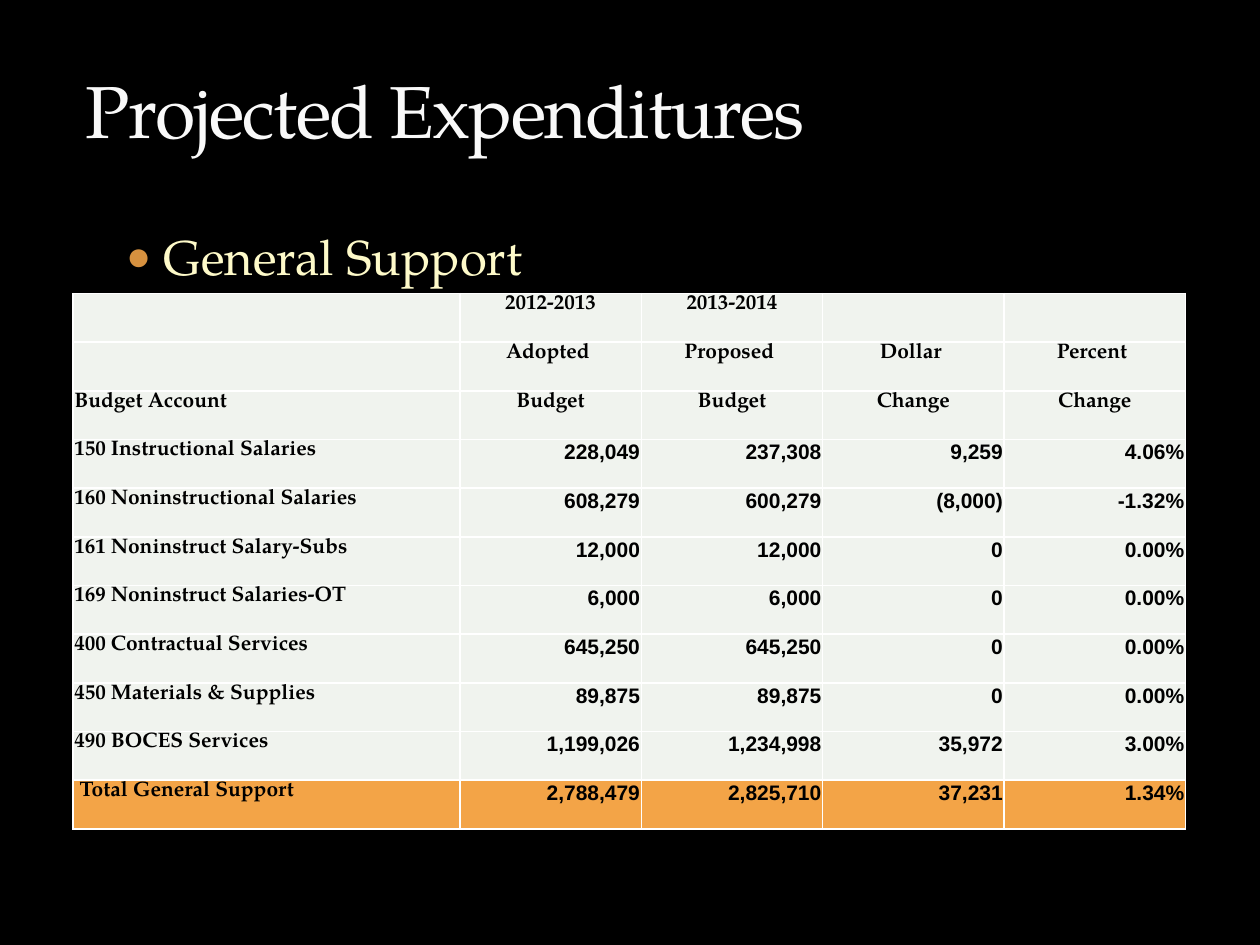
"""Build the Projected Expenditures slide with its general support budget table."""
from dataclasses import dataclass

from lxml import etree
from pptx import Presentation
from pptx.dml.color import RGBColor
from pptx.enum.text import MSO_ANCHOR, MSO_AUTO_SIZE, PP_ALIGN
from pptx.oxml.ns import qn
from pptx.util import Inches, Pt

LEFT, CENTER, RIGHT = PP_ALIGN.LEFT, PP_ALIGN.CENTER, PP_ALIGN.RIGHT
TOP, BOTTOM = MSO_ANCHOR.TOP, MSO_ANCHOR.BOTTOM
NO_AUTOFIT = MSO_AUTO_SIZE.NONE


@dataclass(frozen=True)
class Theme:
    """Hold the colours, fonts and type sizes of the slide."""

    background: str = "000000"
    title: str = "F9F9F9"
    body: str = "FEFAC9"
    bullet: str = "D6913F"
    cell: str = "F0F3EE"
    total: str = "F3A447"
    border: str = "FFFFFF"
    cell_text: str = "000000"
    serif: str = "TeX Gyre Pagella"
    sans: str = "Arial"
    title_size: int = 42
    body_size: int = 28
    cell_size: int = 12


@dataclass(frozen=True)
class Area:
    """Hold a position and size in inches."""

    left: float
    top: float
    width: float
    height: float


@dataclass(frozen=True)
class BudgetRow:
    """Hold one table row: an account label and its four values."""

    label: str
    values: tuple[str, str, str, str]
    kind: str = "account"


THEME = Theme()
TITLE_AREA = Area(0.58, 0.42, 9, 0.85)
BODY_AREA = Area(0.5, 1.75, 9, 5.58)
TABLE_AREA = Area(0.58, 2.33, 8.83, 4.25)
LABEL_WIDTH = 3.07
ROWS = (
    BudgetRow("", ("2012-2013", "2013-2014", "", ""), "header"),
    BudgetRow("", ("Adopted ", "Proposed ", "Dollar ", "Percent "), "header"),
    BudgetRow("Budget Account", ("Budget", "Budget", "Change", "Change"), "header"),
    BudgetRow("150 Instructional Salaries", ("228,049", "237,308", "9,259", "4.06%")),
    BudgetRow("160 Noninstructional Salaries", ("608,279", "600,279", "(8,000)", "-1.32%")),
    BudgetRow("161 Noninstruct Salary-Subs", ("12,000", "12,000", "0", "0.00%")),
    BudgetRow("169 Noninstruct Salaries-OT", ("6,000", "6,000", "0", "0.00%")),
    BudgetRow("400 Contractual Services", ("645,250", "645,250", "0", "0.00%")),
    BudgetRow("450 Materials & Supplies", ("89,875", "89,875", "0", "0.00%")),
    BudgetRow("490 BOCES Services", ("1,199,026", "1,234,998", "35,972", "3.00%")),
    BudgetRow(" Total General Support", ("2,788,479", "2,825,710", "37,231", "1.34%"), "total"),
)


def place(shape, area: Area) -> None:
    """Move and size a shape."""
    shape.left, shape.top = Inches(area.left), Inches(area.top)
    shape.width, shape.height = Inches(area.width), Inches(area.height)


def format_runs(para, font: str, size: int, color: str, bold: bool = False) -> None:
    """Apply one type style to every run of a paragraph."""
    for span in para.runs:
        span.font.name = font
        span.font.size = Pt(size)
        span.font.bold = bold
        span.font.color.rgb = RGBColor.from_string(color)


def fill_placeholder(box, area: Area, text: str, size: int, color: str, anchor):
    """Place a placeholder, write its text and return its paragraph."""
    place(box, area)
    frame = box.text_frame
    frame.text = text
    frame.auto_size = NO_AUTOFIT
    frame.vertical_anchor = anchor
    para = frame.paragraphs[0]
    para.alignment = LEFT
    format_runs(para, THEME.serif, size, color)
    return para


def add_bullet(para) -> None:
    """Give a paragraph a coloured round bullet with a hanging indent."""
    properties = para._p.get_or_add_pPr()
    properties.set("marL", str(Inches(0.7)))
    properties.set("indent", str(Inches(-0.3)))
    color = etree.SubElement(properties, qn("a:buClr"))
    etree.SubElement(color, qn("a:srgbClr"), val=THEME.bullet)
    etree.SubElement(properties, qn("a:buSzPct"), val="85000")
    etree.SubElement(properties, qn("a:buChar"), char="●")


def add_borders(cell) -> None:
    """Draw a thin line on all four sides of a cell."""
    properties = cell._tc.get_or_add_tcPr()
    for side in ("a:lnL", "a:lnR", "a:lnT", "a:lnB"):
        line = etree.SubElement(properties, qn(side), w=str(Pt(1)))
        fill = etree.SubElement(line, qn("a:solidFill"))
        etree.SubElement(fill, qn("a:srgbClr"), val=THEME.border)


def fill_cell(cell, text: str, font: str, alignment, fill: str) -> None:
    """Write and format one table cell."""
    add_borders(cell)
    cell.fill.solid()
    cell.fill.fore_color.rgb = RGBColor.from_string(fill)
    cell.margin_left = cell.margin_right = cell.margin_top = Inches(0.01)
    cell.margin_bottom = 0
    cell.vertical_anchor = TOP
    para = cell.text_frame.paragraphs[0]
    para.text = text
    para.alignment = alignment
    format_runs(para, font, THEME.cell_size, THEME.cell_text, bold=True)


def add_budget_table(page, area: Area, rows: tuple[BudgetRow, ...]) -> None:
    """Add the budget table with a wide label column and equal value columns."""
    value_count = len(rows[0].values)
    frame = page.shapes.add_table(len(rows), value_count + 1, 0, 0, 0, 0)
    place(frame, area)
    table = frame.table
    table.first_row = table.horz_banding = False
    value_width = (area.width - LABEL_WIDTH) / value_count
    for index, column in enumerate(table.columns):
        column.width = Inches(value_width if index else LABEL_WIDTH)
    for row_index, row in enumerate(rows):
        table.rows[row_index].height = Inches(area.height / len(rows))
        fill = THEME.total if row.kind == "total" else THEME.cell
        header = row.kind == "header"
        font, alignment = (THEME.serif, CENTER) if header else (THEME.sans, RIGHT)
        fill_cell(table.cell(row_index, 0), row.label, THEME.serif, LEFT, fill)
        for column_index, value in enumerate(row.values, start=1):
            fill_cell(table.cell(row_index, column_index), value, font, alignment, fill)


def main() -> None:
    """Build and save the deck."""
    deck = Presentation()
    deck.slide_width, deck.slide_height = Inches(10), Inches(7.5)
    page = deck.slides.add_slide(deck.slide_layouts[1])
    page.background.fill.solid()
    page.background.fill.fore_color.rgb = RGBColor.from_string(THEME.background)

    heading = fill_placeholder(page.shapes.title, TITLE_AREA, "Projected Expenditures",
                               THEME.title_size, THEME.title, BOTTOM)
    for span in heading.runs:
        span._r.get_or_add_rPr().set("spc", "-100")

    topic = fill_placeholder(page.placeholders[1], BODY_AREA, "General Support",
                             THEME.body_size, THEME.body, TOP)
    topic.level = 1
    topic.space_before = Pt(3)
    add_bullet(topic)

    add_budget_table(page, TABLE_AREA, ROWS)
    deck.save("out.pptx")


if __name__ == "__main__":
    main()
